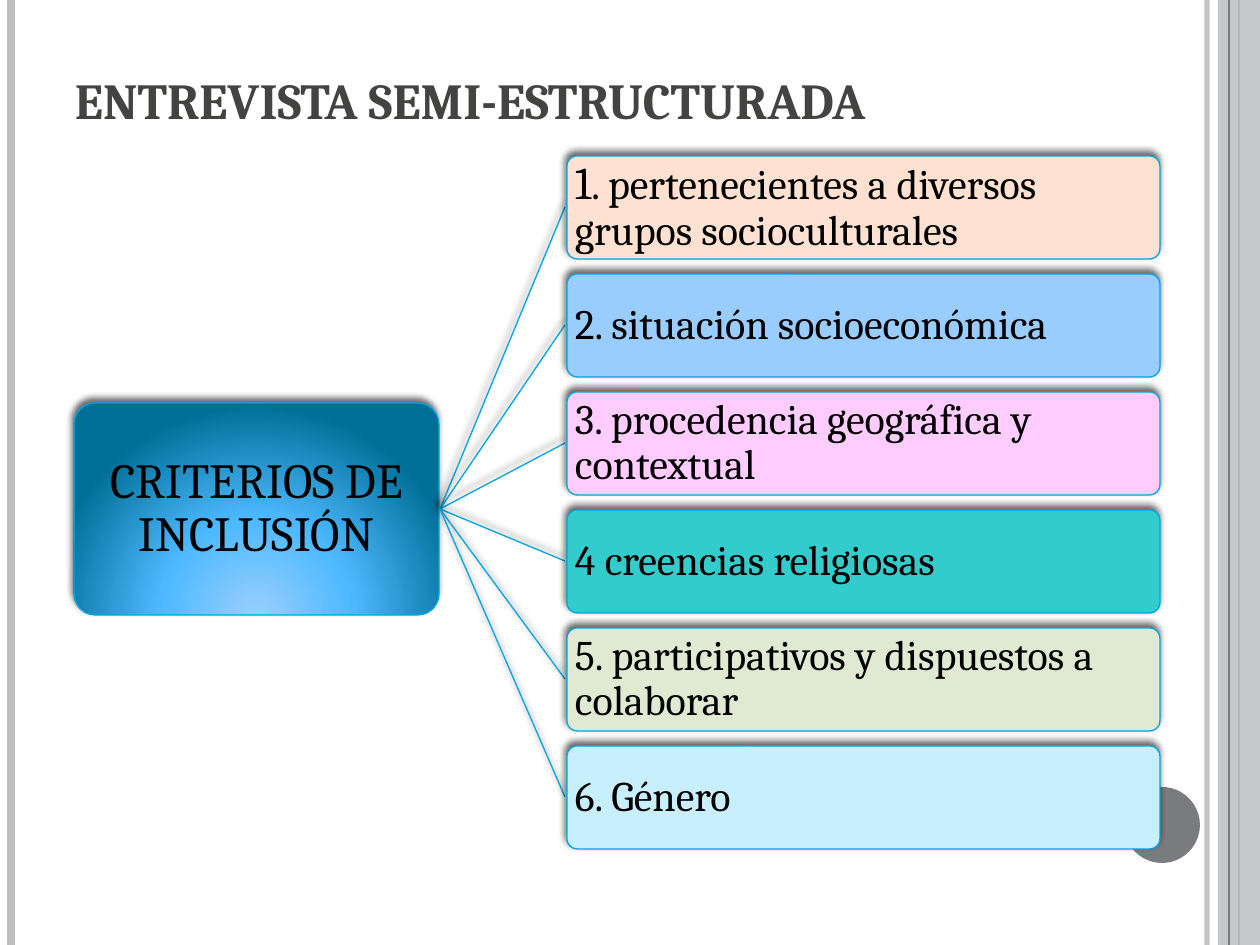
from dataclasses import dataclass

from lxml import etree
from pptx import Presentation
from pptx.dml.color import RGBColor
from pptx.enum.shapes import MSO_CONNECTOR, MSO_SHAPE
from pptx.enum.text import MSO_ANCHOR, PP_ALIGN
from pptx.oxml import parse_xml
from pptx.oxml.ns import nsdecls, qn
from pptx.util import Emu, Pt

STRAIGHT = MSO_CONNECTOR.STRAIGHT
RECTANGLE, ROUNDED, OVAL = MSO_SHAPE.RECTANGLE, MSO_SHAPE.ROUNDED_RECTANGLE, MSO_SHAPE.OVAL
MIDDLE, BOTTOM = MSO_ANCHOR.MIDDLE, MSO_ANCHOR.BOTTOM
LEFT, CENTER = PP_ALIGN.LEFT, PP_ALIGN.CENTER

PAGE_WIDTH, PAGE_HEIGHT = 1260, 945
FONT = "Cambria"
OUTLINE = "00A5E1"
GRADIENT = ((0, "99CFFC"), (46, "4CB9FF"), (100, "006F97"))
BOX_LEFT, BOX_TOP, BOX_WIDTH, BOX_HEIGHT, BOX_PITCH = 567, 156, 593, 103, 118
HUB = (440, 509)


@dataclass
class Rule:
    x: int
    color: str
    width: float
    opacity: int = 100


@dataclass
class Span:
    text: str
    size: float = 24
    color: str = "000000"
    bold: bool = False


@dataclass
class Criterion:
    fill: str
    spans: list[Span]


LEFT_RULES = [Rule(1207, "BEBFC0", 3, 93), Rule(11, "BEBFC0", 4.5), Rule(1239, "797B7E", 1.5)]
RIGHT_RULE = Rule(1229, "797B7E", 0.75)
CRITERIA = [
    Criterion("FEE1D1", [Span("1", 26), Span(". pertenecientes a diversos grupos socioculturales")]),
    Criterion("99CCFF", [Span("2. situación socioeconómica")]),
    Criterion("FFCCFF", [Span("3. procedencia geográfica y contextual")]),
    Criterion("33CCCC", [Span("4 creencias religiosas")]),
    Criterion("E0E9D1", [Span("5. participativos y dispuestos a colaborar")]),
    Criterion("C8EFFD", [Span("6. Género")]),
]


def px(length: int) -> Emu:
    return Emu(round(length * 914400 / 126))


def rgb(value: str) -> RGBColor:
    return RGBColor.from_string(value)


def set_opacity(shape, percent: int) -> None:
    for color in shape._element.spPr.iter(qn("a:srgbClr")):
        etree.SubElement(color, qn("a:alpha"), val=str(percent * 1000))


def set_effects(shape, shadow: bool) -> None:
    effects = etree.SubElement(shape._element.spPr, qn("a:effectLst"))
    if shadow:
        effects.append(parse_xml(
            f'<a:outerShdw {nsdecls("a")} blurRad="{Pt(4)}" dist="{Pt(3)}" dir="{245 * 60000}" '
            'rotWithShape="0"><a:srgbClr val="000000"><a:alpha val="60000"/></a:srgbClr></a:outerShdw>'))


def set_radial_fill(shape) -> None:
    stops = "".join(f'<a:gs pos="{position * 1000}"><a:srgbClr val="{color}"/></a:gs>'
                    for position, color in GRADIENT)
    fill = parse_xml(
        f'<a:gradFill {nsdecls("a")}><a:gsLst>{stops}</a:gsLst><a:path path="circle">'
        '<a:fillToRect l="50000" t="155000" r="50000" b="-55000"/></a:path></a:gradFill>')
    shape._element.spPr.find(qn("a:prstGeom")).addnext(fill)


def draw_line(page, start: tuple[int, int], end: tuple[int, int], color: str,
              width: float, shadow: bool = False):
    line = page.shapes.add_connector(STRAIGHT, *map(px, start + end))
    line.line.color.rgb = rgb(color)
    line.line.width = Pt(width)
    set_effects(line, shadow)
    return line


def draw_rule(page, rule: Rule) -> None:
    line = draw_line(page, (rule.x, 0), (rule.x, PAGE_HEIGHT), rule.color, rule.width)
    if rule.opacity < 100:
        set_opacity(line, rule.opacity)


def draw_plain(page, kind, bounds: tuple[int, int, int, int], color: str):
    shape = page.shapes.add_shape(kind, *map(px, bounds))
    shape.fill.solid()
    shape.fill.fore_color.rgb = rgb(color)
    shape.line.fill.background()
    shape.shadow.inherit = False
    return shape


def write_text(shape, spans: list[Span], align, anchor, inset: int, spacing: float = 1) -> None:
    frame = shape.text_frame
    frame.word_wrap = True
    frame.vertical_anchor = anchor
    frame.margin_left = frame.margin_right = px(inset)
    frame.margin_top = frame.margin_bottom = px(inset)
    para = frame.paragraphs[0]
    para.alignment = align
    para.line_spacing = spacing
    for span in spans:
        run = para.add_run()
        run.text = span.text
        run.font.name = FONT
        run.font.size = Pt(span.size)
        run.font.bold = span.bold
        run.font.color.rgb = rgb(span.color)


def draw_box(page, bounds: tuple[int, int, int, int], spans: list[Span], align,
             inset: int, fill: str | None = None) -> None:
    box = page.shapes.add_shape(ROUNDED, *map(px, bounds))
    box.adjustments[0] = 0.1
    if fill:
        box.fill.solid()
        box.fill.fore_color.rgb = rgb(fill)
    else:
        set_radial_fill(box)
    box.line.color.rgb = rgb(OUTLINE)
    box.line.width = Pt(0.75)
    set_effects(box, True)
    write_text(box, spans, align, MIDDLE, inset, 0.9)


def draw_frame(page) -> None:
    for rule in LEFT_RULES:
        draw_rule(page, rule)
    band = draw_plain(page, RECTANGLE, (1218, 0, 42, PAGE_HEIGHT), "BEBFC0")
    set_opacity(band, 87)
    draw_rule(page, RIGHT_RULE)
    draw_plain(page, OVAL, (1124, 787, 76, 76), "797B7E")


def draw_criteria(page) -> None:
    draw_box(page, (74, 403, 365, 212), [Span("CRITERIOS DE INCLUSIÓN", 28)], CENTER, 9)
    for index, criterion in enumerate(CRITERIA):
        top = BOX_TOP + index * BOX_PITCH
        draw_line(page, HUB, (BOX_LEFT - 2, top + BOX_HEIGHT // 2), OUTLINE, 0.75, True)
        draw_box(page, (BOX_LEFT, top, BOX_WIDTH, BOX_HEIGHT), criterion.spans, LEFT, 5, criterion.fill)


def draw_title(page) -> None:
    title = page.shapes.add_textbox(*map(px, (63, 38, 1074, 98)))
    write_text(title, [Span("ENTREVISTA SEMI-ESTRUCTURADA", 28.8, "434342", True)], LEFT, BOTTOM, 12)
    title.text_frame.margin_bottom = px(6)


def main() -> None:
    deck = Presentation()
    deck.slide_width, deck.slide_height = px(PAGE_WIDTH), px(PAGE_HEIGHT)
    page = deck.slides.add_slide(deck.slide_layouts[6])
    draw_frame(page)
    draw_criteria(page)
    draw_title(page)
    deck.save("out.pptx")


if __name__ == "__main__":
    main()
